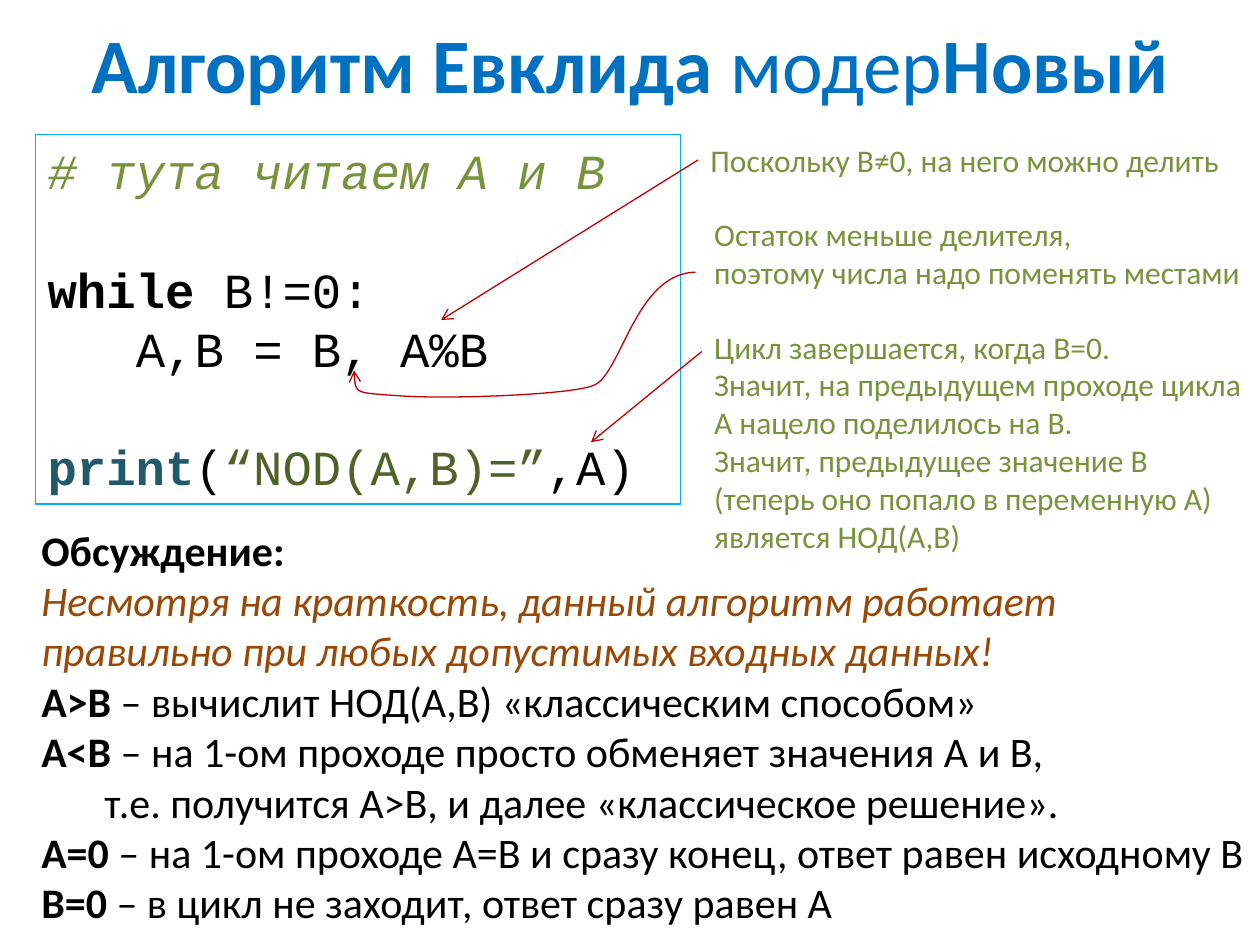
from dataclasses import dataclass, field

from lxml import etree
from pptx import Presentation
from pptx.dml.color import RGBColor
from pptx.enum.shapes import MSO_CONNECTOR, MSO_SHAPE
from pptx.enum.text import MSO_ANCHOR, MSO_AUTO_SIZE, PP_ALIGN
from pptx.oxml.ns import qn
from pptx.util import Inches, Pt

RECT = MSO_SHAPE.RECTANGLE
STRAIGHT = MSO_CONNECTOR.STRAIGHT
LEFT, CENTER = PP_ALIGN.LEFT, PP_ALIGN.CENTER
TOP, MIDDLE = MSO_ANCHOR.TOP, MSO_ANCHOR.MIDDLE
GROW = MSO_AUTO_SIZE.SHAPE_TO_FIT_TEXT

BLACK = RGBColor(0x00, 0x00, 0x00)
BLUE = RGBColor(0x00, 0x70, 0xC0)
SKY = RGBColor(0x00, 0xB0, 0xF0)
GREEN = RGBColor(0x77, 0x93, 0x3C)
OLIVE = RGBColor(0x4F, 0x62, 0x28)
TEAL = RGBColor(0x21, 0x59, 0x68)
BROWN = RGBColor(0x98, 0x48, 0x07)
RED = RGBColor(0xC0, 0x00, 0x00)

TITLE_ONLY = 5
CODE_LINE = 34  # height of one code line, points
CODE_INDENT = 0.7  # width of three code characters, inches


@dataclass
class Span:
    text: str
    color: RGBColor = BLACK
    bold: bool = False
    italic: bool = False


@dataclass
class Para:
    spans: list[Span]
    before: float = 0
    indent: float = 0


@dataclass
class Note:
    box: tuple[float, float, float, float]
    lines: list[str]
    arrow: list[tuple[float, float]] = field(default_factory=list)
    joined: bool = False


def write(tf, paras: list[Para], *, size: float, font: str = "Calibri",
          align=LEFT, anchor=TOP, auto_size=GROW) -> None:
    """Fill a text frame; a newline inside a span is a line break."""
    tf.word_wrap = True
    tf.auto_size = auto_size
    tf.vertical_anchor = anchor
    for i, para in enumerate(paras):
        p = tf.add_paragraph() if i else tf.paragraphs[0]
        p.alignment = align
        p.space_before = Pt(para.before)
        if para.indent:
            p._p.get_or_add_pPr().set("marL", str(Inches(para.indent)))
        for span in para.spans:
            for j, line in enumerate(span.text.split("\n")):
                if j:
                    p.add_line_break()
                r = p.add_run()
                r.text = line
                r.font.size, r.font.name = Pt(size), font
                r.font.bold, r.font.italic = span.bold, span.italic
                r.font.color.rgb = span.color


def style_arrow(sp) -> None:
    """Thin red line with an open arrowhead and no shadow."""
    sp.line.color.rgb = RED
    sp.line.width = Pt(0.75)
    etree.SubElement(sp.line._get_or_add_ln(), qn("a:tailEnd"), type="arrow")
    spPr = sp._element.spPr
    if spPr.find(qn("a:effectLst")) is None:
        etree.SubElement(spPr, qn("a:effectLst"))


def add_curve(shapes, points: list[tuple[float, float]]):
    """Start point, then three points for each cubic segment."""
    fb = shapes.build_freeform(*map(Inches, points[0]), scale=1.0)
    fb.add_line_segments([(Inches(x), Inches(y)) for x, y in points[1:]], close=False)
    sp = fb.convert_to_shape()
    sp.fill.background()
    sp.shadow.inherit = False
    path = sp._element.spPr.find(".//" + qn("a:path"))
    path.set("fill", "none")
    segments = path.findall(qn("a:lnTo"))
    for i in range(0, len(segments), 3):
        curve = etree.SubElement(path, qn("a:cubicBezTo"))
        for segment in segments[i:i + 3]:
            curve.append(segment[0])
            path.remove(segment)
    return sp


def add_note(s, note: Note) -> None:
    """Green remark grouped with the arrow to its code."""
    shapes = s.shapes.add_group_shape().shapes
    tb = shapes.add_textbox(*map(Inches, note.box))
    write(tb.text_frame, [Para([Span(t, GREEN)]) for t in note.lines], size=18)
    if len(note.arrow) > 2:
        arrow = add_curve(shapes, note.arrow)
    else:
        (x1, y1), (x2, y2) = note.arrow
        arrow = shapes.add_connector(STRAIGHT, Inches(x1), Inches(y1),
                                     Inches(x2), Inches(y2))
        if note.joined:
            arrow.begin_connect(tb, 1)
    style_arrow(arrow)


TITLE = [Para([Span("Алгоритм Евклида ", BLUE, bold=True), Span("модер", BLUE),
               Span("Новый", BLUE, bold=True)])]

CODE = [
    Para([Span("# тута читаем A и B", GREEN, italic=True)]),
    Para([Span("while", bold=True), Span(" B!=0:")], before=CODE_LINE),
    Para([Span("А,В = В, А%В")], indent=CODE_INDENT),
    Para([Span("print", TEAL, bold=True), Span("("),
          Span("“NOD(А,В)=”", OLIVE), Span(",A)")], before=CODE_LINE),
]

NOTES = [
    Note((5.54, 1.07, 4.45, 0.4), ["Поскольку В≠0, на него можно делить"],
         [(5.54, 1.27), (3.5, 2.54)], joined=True),
    Note((5.57, 2.55, 4.43, 1.92),
         ["Цикл завершается, когда В=0.\n"
          "Значит, на предыдущем проходе цикла А нацело поделилось на В.",
          "Значит, предыдущее значение В (теперь оно попало в переменную А) "
          "является НОД(А,В)"],
         [(5.57, 2.79), (4.69, 3.51)]),
    Note((5.57, 1.66, 4.45, 0.71),
         ["Остаток меньше делителя, \nпоэтому числа надо поменять местами"],
         [(5.52, 2.16), (5.04, 2.17), (4.93, 2.98), (4.71, 3.06),
          (4.5, 3.14), (3.47, 3.17), (3.15, 3.14),
          (2.83, 3.12), (2.81, 3.11), (2.81, 2.94)]),
]

CASES = [
    ("A>B ", "– вычислит НОД(А,В) «классическим способом»"),
    ("A<B", " – на 1-ом проходе просто обменяет значения А и В,\n"
            "\tт.е. получится А>В, и далее «классическое решение»."),
    ("А=0 ", "– на 1-ом проходе А=В и сразу конец, ответ равен исходному В"),
    ("В=0 ", "– в цикл не заходит, ответ сразу равен А"),
]

DISCUSSION = [
    Para([Span("Обсуждение:", bold=True)]),
    Para([Span("Несмотря на краткость, данный алгоритм работает правильно "
               "при любых допустимых входных данных!", BROWN, italic=True)]),
    *[Para([Span(case, bold=True), Span(result)]) for case, result in CASES],
]


def main() -> None:
    prs = Presentation()
    prs.slide_width, prs.slide_height = Inches(10), Inches(7.5)
    s = prs.slides.add_slide(prs.slide_layouts[TITLE_ONLY])

    # Title
    title = s.shapes.title
    title.left, title.top = Inches(0), Inches(0)
    title.width, title.height = Inches(10), Inches(1)
    write(title.text_frame, TITLE, size=44, align=CENTER, anchor=MIDDLE,
          auto_size=MSO_AUTO_SIZE.NONE)

    # Code frame
    code = s.shapes.add_shape(RECT, *map(Inches, (0.28, 1.07, 5.12, 2.93)))
    code.shadow.inherit = False
    code.fill.background()
    code.line.color.rgb = SKY
    code.line.width = Pt(0.75)
    write(code.text_frame, CODE, size=28, font="Courier New")

    # Remarks with arrows
    for note in NOTES:
        add_note(s, note)

    # Discussion
    tb = s.shapes.add_textbox(*map(Inches, (0.23, 4.11, 9.77, 3.33)))
    write(tb.text_frame, DISCUSSION, size=24)

    prs.save("out.pptx")


if __name__ == "__main__":
    main()
